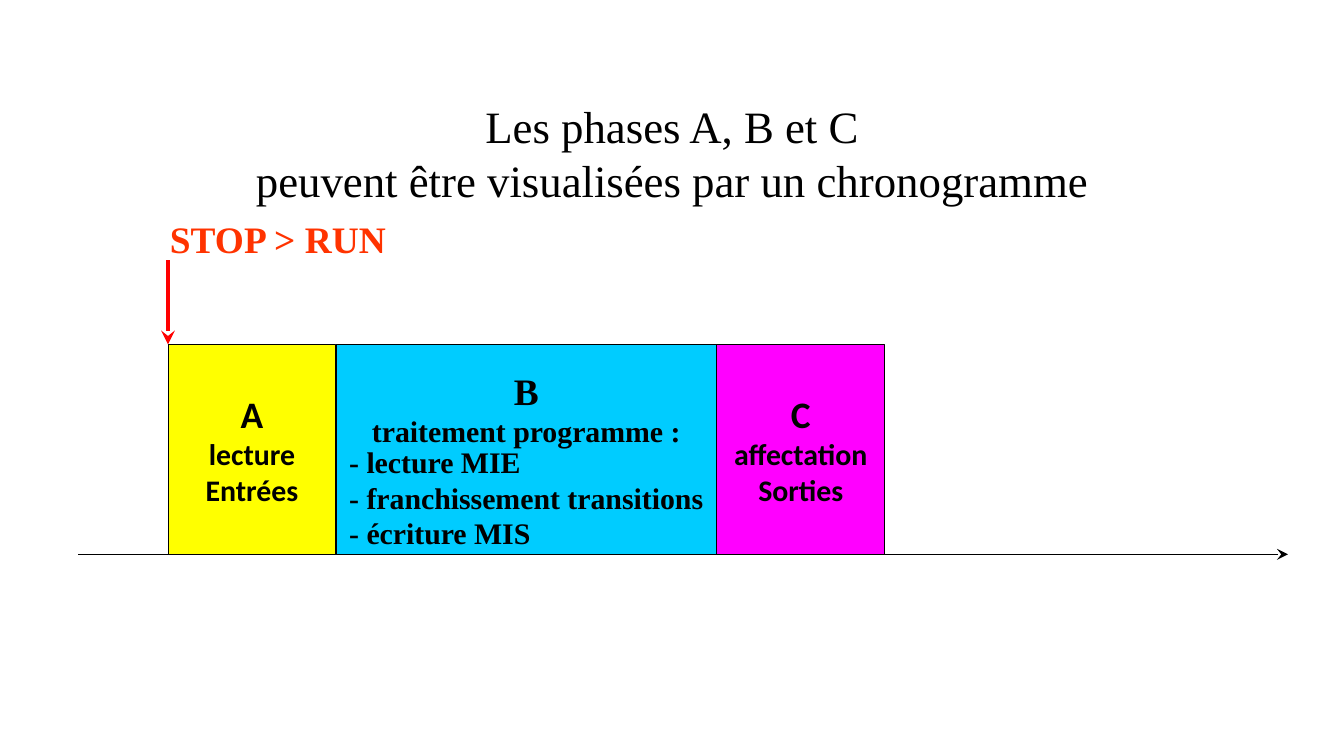
from lxml import etree
from pptx import Presentation
from pptx.dml.color import RGBColor
from pptx.enum.shapes import MSO_CONNECTOR, MSO_SHAPE
from pptx.enum.text import MSO_ANCHOR, MSO_AUTO_SIZE, PP_ALIGN
from pptx.oxml.ns import qn
from pptx.util import Pt

LEFT, CENTER = PP_ALIGN.LEFT, PP_ALIGN.CENTER
TOP, MIDDLE = MSO_ANCHOR.TOP, MSO_ANCHOR.MIDDLE
RECT, STRAIGHT = MSO_SHAPE.RECTANGLE, MSO_CONNECTOR.STRAIGHT
SERIF, SANS = "Times New Roman", "Calibri"
PX = 6350
W, H = 1440, 810

COLORS = {"black": "000000", "yellow": "FFFF00", "cyan": "00CCFF",
          "magenta": "FF00FF", "orange": "FF3300", "red": "FF0000"}

TITLE = ["Les phases A, B et C", "peuvent être visualisées par un chronogramme"]
START_LABEL = "STOP > RUN"
PHASES = [
    {"width": 180, "fill": "yellow", "lines": ["A", "lecture", "Entrées"]},
    {"width": 408, "fill": "cyan", "heading": ["B", "traitement programme :"],
     "steps": ["- lecture MIE", "- franchissement transitions", "- écriture MIS"]},
    {"width": 180, "fill": "magenta", "lines": ["C", "affectation", "Sorties"]},
]
START_X, PHASE_Y, PHASE_H = 180, 369, 225
AXIS_Y, AXIS_X1, AXIS_X2 = PHASE_Y + PHASE_H, 84, 1380


def rgb(name):
    return RGBColor.from_string(COLORS[name])


def px(*values):
    return [v * PX for v in values]


def write(shape, lines, sizes, font, align=CENTER, anchor=TOP,
          bold=True, wrap=True, color="black"):
    tf = shape.text_frame
    tf.text = "\n".join(lines)
    tf.word_wrap = wrap
    tf.auto_size = MSO_AUTO_SIZE.NONE
    tf.vertical_anchor = anchor
    for p, size in zip(tf.paragraphs, sizes):
        p.alignment = align
        p.font.name, p.font.size, p.font.bold = font, Pt(size), bold
        p.font.color.rgb = rgb(color)


def add_text(box, *args, **kwargs):
    write(s.shapes.add_textbox(*px(*box)), *args, **kwargs)


def add_arrow(x1, y1, x2, y2, color, width):
    c = s.shapes.add_connector(STRAIGHT, *px(x1, y1, x2, y2))
    c.line.color.rgb = rgb(color)
    c.line.width = Pt(width)
    etree.SubElement(c.line._get_or_add_ln(), qn("a:tailEnd"), type="stealth")
    etree.SubElement(c._element.spPr, qn("a:effectLst"))


prs = Presentation()
prs.slide_width, prs.slide_height = px(W, H)
s = prs.slides.add_slide(prs.slide_layouts[5])

title = s.shapes.title
title.left, title.top, title.width, title.height = px(0, 99, W, 131)
write(title, TITLE, [24, 24], SERIF, bold=False)

add_arrow(AXIS_X1, AXIS_Y, AXIS_X2, AXIS_Y, "black", 0.25)

x = START_X
for phase in PHASES:
    width = phase["width"]
    sp = s.shapes.add_shape(RECT, *px(x, PHASE_Y, width, PHASE_H))
    sp.shadow.inherit = False
    sp.fill.solid()
    sp.fill.fore_color.rgb = rgb(phase["fill"])
    sp.line.color.rgb = rgb("black")
    sp.line.width = Pt(0.5)
    if "lines" in phase:
        write(sp, phase["lines"], [20, 16, 16], SANS, anchor=MIDDLE, wrap=False)
    else:
        add_text((x, 468, 415, 131), phase["steps"], [16] * 3, SERIF, LEFT, wrap=False)
        add_text((x, 387, width, 102), phase["heading"], [20, 16], SERIF)
    x += width

add_text((168, 225, 282, 63), [START_LABEL], [20], SERIF, LEFT, color="orange")
add_arrow(START_X, 279, START_X, PHASE_Y, "red", 2.5)

prs.save("out.pptx")
